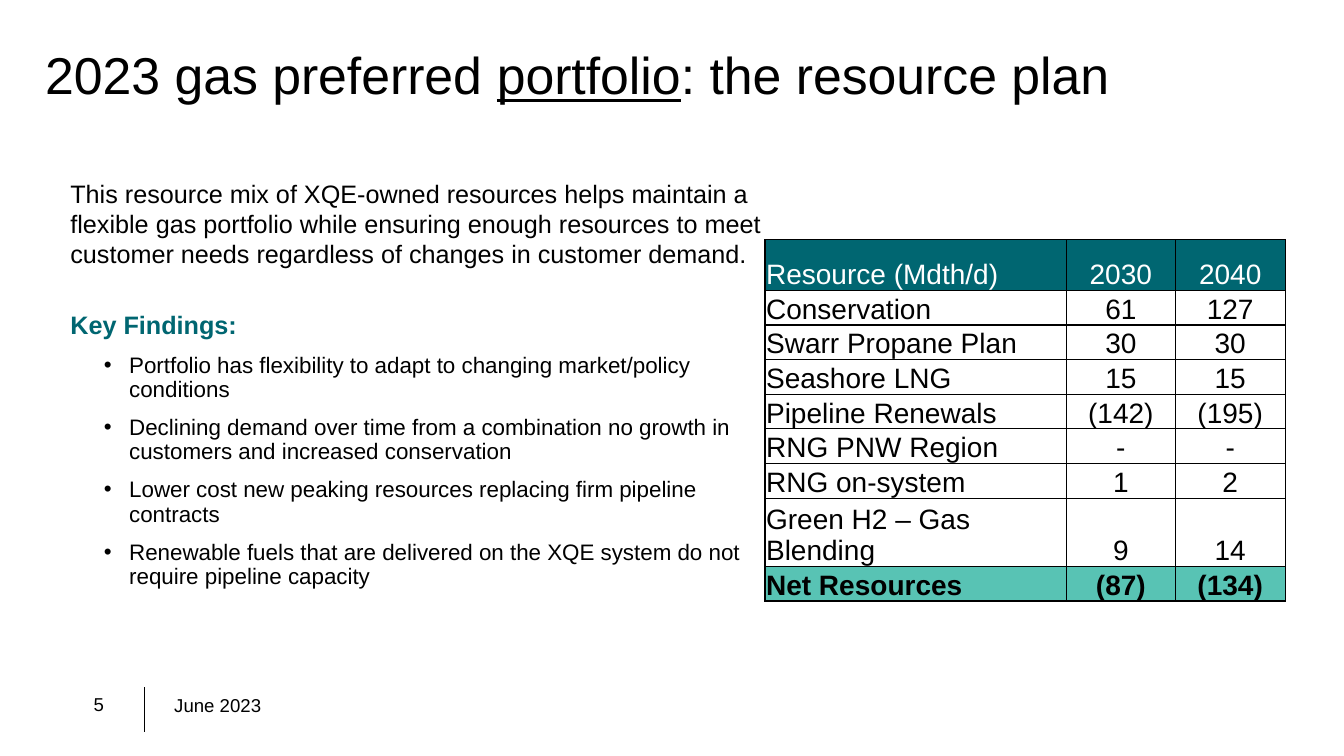
from dataclasses import dataclass

from lxml.etree import SubElement
from pptx import Presentation
from pptx.dml.color import RGBColor
from pptx.enum.shapes import MSO_CONNECTOR
from pptx.enum.text import MSO_ANCHOR, PP_ALIGN
from pptx.oxml.ns import qn
from pptx.util import Emu, Inches, Pt

COLUMNS, ROWS = 160, 90
CELL = Inches(1) // 12
FONT = "Arial"
BLACK, WHITE, TEAL, MINT = "000000", "FFFFFF", "006671", "58C3B4"


@dataclass(frozen=True)
class Area:
    """A place on the slide, in grid columns and rows."""
    column: float
    row: float
    width: float
    height: float


@dataclass(frozen=True)
class Style:
    size: float
    color: str = BLACK
    bold: bool = False
    line_spacing: float = 1.0
    space_before: float = 0
    indent: float = 0
    hanging: float = 0
    bullet: str = ""


@dataclass(frozen=True)
class Line:
    text: str
    style: Style


TITLE = Style(37, line_spacing=0.9)
FOOTER = Style(13.3, line_spacing=0.9)
INTRO = Style(18, indent=3)
HEADING = Style(18, TEAL, bold=True, space_before=29, indent=3)
FINDING = Style(16, line_spacing=0.9, space_before=10, indent=10, hanging=3, bullet="•")

TITLE_PARTS = ("2023 gas preferred ", "portfolio", ": the resource plan")
INTRO_TEXT = (
    "This resource mix of XQE-owned resources helps maintain a flexible gas portfolio "
    "while ensuring enough resources to meet customer needs regardless of changes in "
    "customer demand."
)
FINDINGS = (
    "Portfolio has flexibility to adapt to changing market/policy conditions",
    "Declining demand over time from a combination no growth in customers and increased conservation",
    "Lower cost new peaking resources replacing firm pipeline contracts",
    "Renewable fuels that are delivered on the XQE system do not require pipeline capacity",
)
RESOURCES = (
    ("Resource (Mdth/d)", "2030", "2040"),
    ("Conservation", "61", "127"),
    ("Swarr Propane Plan", "30", "30"),
    ("Seashore LNG", "15", "15"),
    ("Pipeline Renewals", "(142)", "(195)"),
    ("RNG PNW Region", "-", "-"),
    ("RNG on-system", "1", "2"),
    ("Green H2 – Gas Blending", "9", "14"),
    ("Net Resources", "(87)", "(134)"),
)
TABLE_COLUMNS = (35.88, 12.96, 13.08)
HEADER_ROW, BODY_ROW = 6, 3


def grid(cells: float) -> Emu:
    return Emu(round(cells * CELL))


def rgb(color: str) -> RGBColor:
    return RGBColor.from_string(color)


def style_paragraph(para, style: Style) -> None:
    properties = para._p.get_or_add_pPr()
    properties.set("marL", str(grid(style.indent)))
    properties.set("indent", str(-grid(style.hanging)))
    para.line_spacing = style.line_spacing
    para.space_before = Pt(style.space_before)
    if style.bullet:
        SubElement(properties, qn("a:buFont"), typeface=FONT)
        SubElement(properties, qn("a:buChar"), char=style.bullet)
    for span in para.runs:
        span.font.name = FONT
        span.font.size = Pt(style.size)
        span.font.bold = style.bold
        span.font.color.rgb = rgb(style.color)


def add_text(page, area: Area, lines: list[Line], anchor=MSO_ANCHOR.TOP):
    box = page.shapes.add_textbox(
        grid(area.column), grid(area.row), grid(area.width), grid(area.height)
    )
    frame = box.text_frame
    frame.word_wrap = True
    frame.vertical_anchor = anchor
    for index, line in enumerate(lines):
        para = frame.add_paragraph() if index else frame.paragraphs[0]
        para.text = line.text
        style_paragraph(para, line.style)
    return box


def add_title(page) -> None:
    box = add_text(page, Area(4.2, 0.6, 141.84, 17.4), [Line("", TITLE)], MSO_ANCHOR.MIDDLE)
    para = box.text_frame.paragraphs[0]
    for part in TITLE_PARTS:
        para.add_run().text = part
    style_paragraph(para, TITLE)
    para.runs[1].font.underline = True


def add_footer(page) -> None:
    add_text(page, Area(9.96, 82.2, 6.72, 3.96), [Line("5", FOOTER)])
    add_text(page, Area(19.56, 82.32, 55.32, 3.96), [Line("June 2023", FOOTER)])
    divider = page.shapes.add_connector(
        MSO_CONNECTOR.STRAIGHT, grid(17.16), grid(81.84), grid(17.16), grid(87.12)
    )
    divider.line.color.rgb = rgb(BLACK)
    divider.line.width = Pt(0.75)
    SubElement(divider._element.spPr, qn("a:effectLst"))


def add_borders(cell, left: float, right: float) -> None:
    """Draw the four cell borders; the vertical widths are in points."""
    properties = cell._tc.get_or_add_tcPr()
    for side, width in (("L", left), ("R", right), ("T", 1), ("B", 1)):
        border = SubElement(properties, qn(f"a:ln{side}"), w=str(Pt(width)))
        fill = SubElement(border, qn("a:solidFill"))
        SubElement(fill, qn("a:srgbClr"), val=BLACK)


def add_resource_table(page) -> None:
    last_row = len(RESOURCES) - 1
    table = page.shapes.add_table(
        len(RESOURCES), len(TABLE_COLUMNS), grid(91.08), grid(28.56),
        grid(sum(TABLE_COLUMNS)), grid(HEADER_ROW + BODY_ROW * last_row),
    ).table
    table.first_row = table.horz_banding = False
    for column, width in zip(table.columns, TABLE_COLUMNS):
        column.width = grid(width)
    row_fills = {0: TEAL, last_row: MINT}
    for row, values in enumerate(RESOURCES):
        table.rows[row].height = grid(BODY_ROW if row else HEADER_ROW)
        style = Style(20, BLACK if row else WHITE, bold=row == last_row)
        for column, value in enumerate(values):
            cell = table.cell(row, column)
            add_borders(cell, 0.75 if column == 2 else 1, 0.75 if column == 1 else 1)
            cell.margin_left = cell.margin_right = cell.margin_top = Inches(0.01)
            cell.margin_bottom = 0
            cell.vertical_anchor = MSO_ANCHOR.BOTTOM
            if row in row_fills:
                cell.fill.solid()
                cell.fill.fore_color.rgb = rgb(row_fills[row])
            else:
                cell.fill.background()
            para = cell.text_frame.paragraphs[0]
            para.text = value
            para.alignment = PP_ALIGN.CENTER if column else PP_ALIGN.LEFT
            style_paragraph(para, style)


def main() -> None:
    deck = Presentation()
    deck.slide_width, deck.slide_height = grid(COLUMNS), grid(ROWS)
    page = deck.slides.add_slide(deck.slide_layouts[6])
    add_footer(page)
    add_title(page)
    findings = [Line(text, FINDING) for text in FINDINGS]
    lines = [Line(INTRO_TEXT, INTRO), Line("Key Findings:", HEADING), *findings]
    add_text(page, Area(4.2, 20.64, 88.08, 56.04), lines)
    add_resource_table(page)
    deck.save("out.pptx")


if __name__ == "__main__":
    main()
